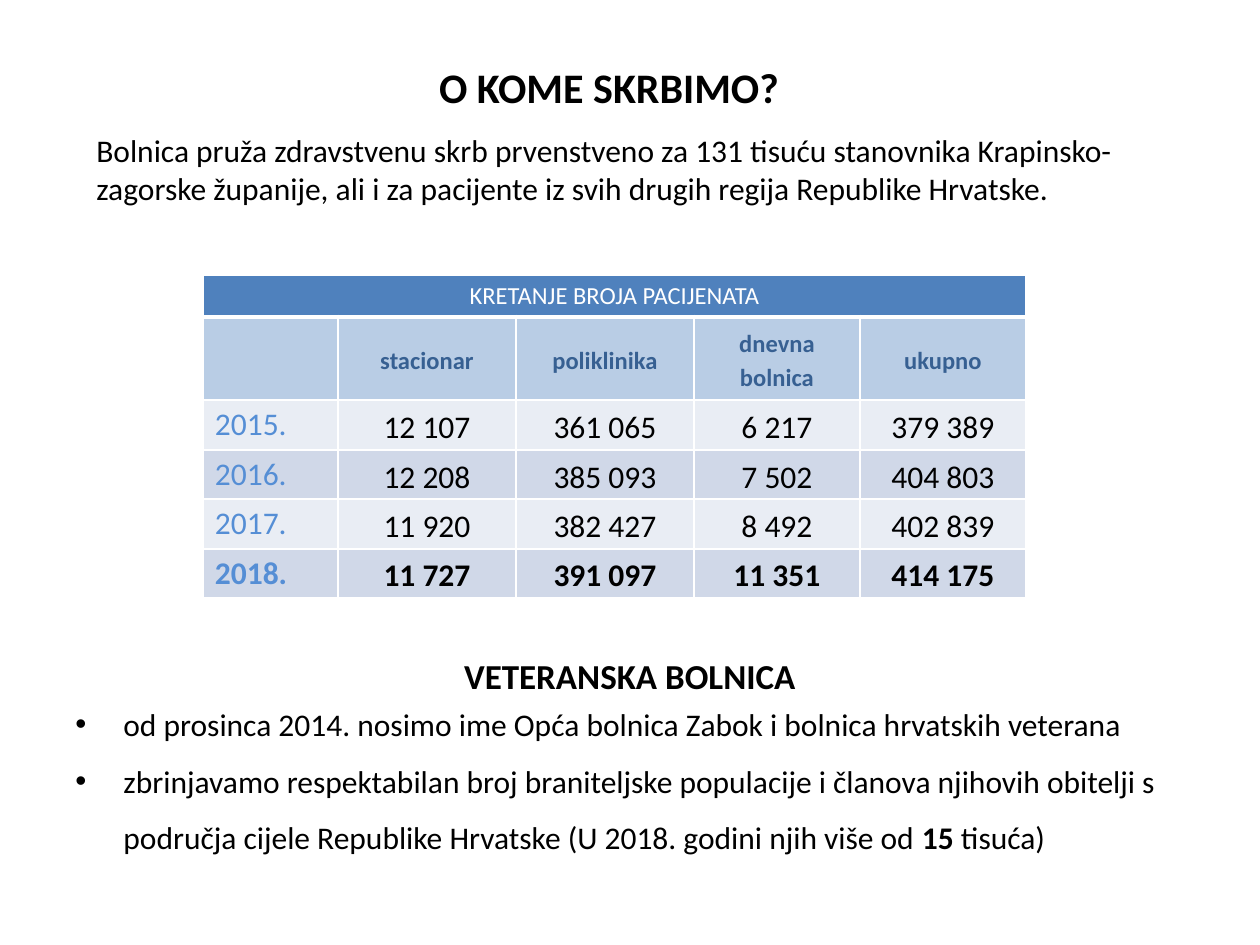
"""Builds the slide on hospital patient numbers and the veterans' hospital."""
from dataclasses import dataclass

import lxml.etree
import pptx
import pptx.dml.color
import pptx.enum.text
import pptx.oxml.ns
import pptx.util

EMU_PER_PX = 914400 / 126
FONT = "Calibri"
BLACK, WHITE = "000000", "FFFFFF"
ALIGN = pptx.enum.text.PP_ALIGN
ANCHOR = pptx.enum.text.MSO_ANCHOR

COLUMN_WIDTHS = (135, 178, 178, 166, 166)
ROW_HEIGHTS = (42, 83, 50, 49, 50, 49)
TABLE_TITLE = "KRETANJE BROJA PACIJENATA"
HEADINGS = ("", "stacionar", "poliklinika", "dnevna bolnica", "ukupno")
PATIENTS = (
    ("2015.", "12 107", "361 065", "6 217", "379 389"),
    ("2016.", "12 208", "385 093", "7 502", "404 803"),
    ("2017.", "11 920", "382 427", "8 492", "402 839"),
    ("2018.", "11 727", "391 097", "11 351", "414 175"),
)


@dataclass(frozen=True)
class Run:
    text: str
    size: int = 18
    color: str = BLACK
    bold: bool = False


@dataclass(frozen=True)
class TextBlock:
    left: int
    top: int
    width: int
    height: int
    paragraphs: tuple[tuple[Run, ...], ...]
    align: ALIGN = ALIGN.LEFT
    anchor: ANCHOR = ANCHOR.TOP
    spacing: float = 1.0
    bullets: bool = False


@dataclass(frozen=True)
class CellStyle:
    fill: str
    align: ALIGN = ALIGN.CENTER
    anchor: ANCHOR = ANCHOR.MIDDLE
    margin_x: int = 9
    margin_y: int = 0
    spacing: float = 1.15
    top_line: int = 1
    bottom_line: int = 1


TEXT_BLOCKS = (
    TextBlock(63, 38, 1092, 97, ((Run("O KOME SKRBIMO?", 24, bold=True),),),
              ALIGN.CENTER, ANCHOR.MIDDLE),
    TextBlock(84, 641, 1092, 69, ((Run("VETERANSKA BOLNICA", 20, bold=True),),),
              ALIGN.CENTER, ANCHOR.MIDDLE),
    TextBlock(63, 680, 1114, 149, (
        (Run("od prosinca 2014. nosimo ime Opća bolnica Zabok i bolnica "
             "hrvatskih veterana"),),
        (Run("zbrinjavamo respektabilan broj braniteljske populacije i članova "
             "njihovih obitelji s područja cijele Republike Hrvatske "
             "(U 2018. godini njih više od "),
         Run("15", bold=True), Run(" tisuća)")),
    ), spacing=1.5, bullets=True),
    TextBlock(84, 125, 1072, 89, (
        (Run("Bolnica pruža zdravstvenu skrb prvenstveno za 131 tisuću stanovnika "
             "Krapinsko-zagorske županije, ali i za pacijente iz svih drugih "
             "regija Republike Hrvatske."),),)),
)


def px(length: int) -> pptx.util.Emu:
    """Turn a length in px into EMU."""
    return pptx.util.Emu(round(length * EMU_PER_PX))


def rgb(value: str) -> pptx.dml.color.RGBColor:
    """Turn a hex string into a colour."""
    return pptx.dml.color.RGBColor.from_string(value)


def add_run(paragraph, content: Run) -> None:
    """Append one formatted run to a paragraph."""
    run = paragraph.add_run()
    run.text = content.text
    run.font.name = FONT
    run.font.size = pptx.util.Pt(content.size)
    run.font.bold = content.bold
    run.font.color.rgb = rgb(content.color)


def add_bullet(paragraph) -> None:
    """Give a paragraph a hanging round bullet."""
    properties = paragraph._p.get_or_add_pPr()
    properties.set("marL", str(px(48)))
    properties.set("indent", str(px(-48)))
    font = lxml.etree.SubElement(properties, pptx.oxml.ns.qn("a:buFont"))
    font.set("typeface", "Arial")
    bullet = lxml.etree.SubElement(properties, pptx.oxml.ns.qn("a:buChar"))
    bullet.set("char", "•")


def add_text(slide, block: TextBlock) -> None:
    """Draw a text block."""
    shape = slide.shapes.add_textbox(
        px(block.left), px(block.top), px(block.width), px(block.height))
    frame = shape.text_frame
    frame.word_wrap = True
    frame.vertical_anchor = block.anchor
    for index, runs in enumerate(block.paragraphs):
        paragraph = frame.add_paragraph() if index else frame.paragraphs[0]
        if block.bullets:
            add_bullet(paragraph)
        paragraph.alignment = block.align
        paragraph.line_spacing = block.spacing
        for run in runs:
            add_run(paragraph, run)


def add_borders(cell, top: int, bottom: int) -> None:
    """Give a cell white borders with the given top and bottom widths."""
    properties = cell._tc.get_or_add_tcPr()
    for side, width in (("L", 1), ("R", 1), ("T", top), ("B", bottom)):
        line = lxml.etree.SubElement(properties, pptx.oxml.ns.qn(f"a:ln{side}"))
        line.set("w", str(pptx.util.Pt(width)))
        fill = lxml.etree.SubElement(line, pptx.oxml.ns.qn("a:solidFill"))
        color = lxml.etree.SubElement(fill, pptx.oxml.ns.qn("a:srgbClr"))
        color.set("val", WHITE)


def fill_cell(cell, content: Run, style: CellStyle) -> None:
    """Format a cell and write its text."""
    add_borders(cell, style.top_line, style.bottom_line)
    cell.fill.solid()
    cell.fill.fore_color.rgb = rgb(style.fill)
    cell.vertical_anchor = style.anchor
    cell.margin_left = cell.margin_right = px(style.margin_x)
    cell.margin_top = cell.margin_bottom = px(style.margin_y)
    paragraph = cell.text_frame.paragraphs[0]
    paragraph.alignment = style.align
    paragraph.line_spacing = style.spacing
    if content.text:
        add_run(paragraph, content)


def add_patient_table(slide) -> None:
    """Draw the table of patient numbers by year."""
    table = slide.shapes.add_table(
        len(ROW_HEIGHTS), len(COLUMN_WIDTHS), px(203), px(275),
        px(sum(COLUMN_WIDTHS)), px(sum(ROW_HEIGHTS))).table
    for column, width in zip(table.columns, COLUMN_WIDTHS):
        column.width = px(width)
    for row, height in zip(table.rows, ROW_HEIGHTS):
        row.height = px(height)

    table.cell(0, 0).merge(table.cell(0, len(COLUMN_WIDTHS) - 1))
    title_style = CellStyle("4F81BD", margin_x=12, margin_y=5, spacing=1.0,
                            bottom_line=3)
    heading_style = CellStyle("B9CDE5", top_line=3)
    for column, heading in enumerate(HEADINGS):
        title = "" if column else TABLE_TITLE
        fill_cell(table.cell(0, column), Run(title, 14, WHITE), title_style)
        fill_cell(table.cell(1, column), Run(heading, 14, "376092", True),
                  heading_style)

    for index, values in enumerate(PATIENTS):
        fill = "D0D8E8" if index % 2 else "E9EDF4"
        latest = index == len(PATIENTS) - 1
        year_style = CellStyle(fill, ALIGN.LEFT, margin_x=12, margin_y=5, spacing=1.0)
        for column, value in enumerate(values):
            color = BLACK if column else "558ED5"
            style = CellStyle(fill) if column else year_style
            fill_cell(table.cell(index + 2, column),
                      Run(value, color=color, bold=latest), style)


def main() -> None:
    """Build and save the presentation."""
    presentation = pptx.Presentation()
    presentation.slide_width, presentation.slide_height = px(1260), px(945)
    slide = presentation.slides.add_slide(presentation.slide_layouts[6])
    add_patient_table(slide)
    for block in TEXT_BLOCKS:
        add_text(slide, block)
    presentation.save("out.pptx")


if __name__ == "__main__":
    main()
